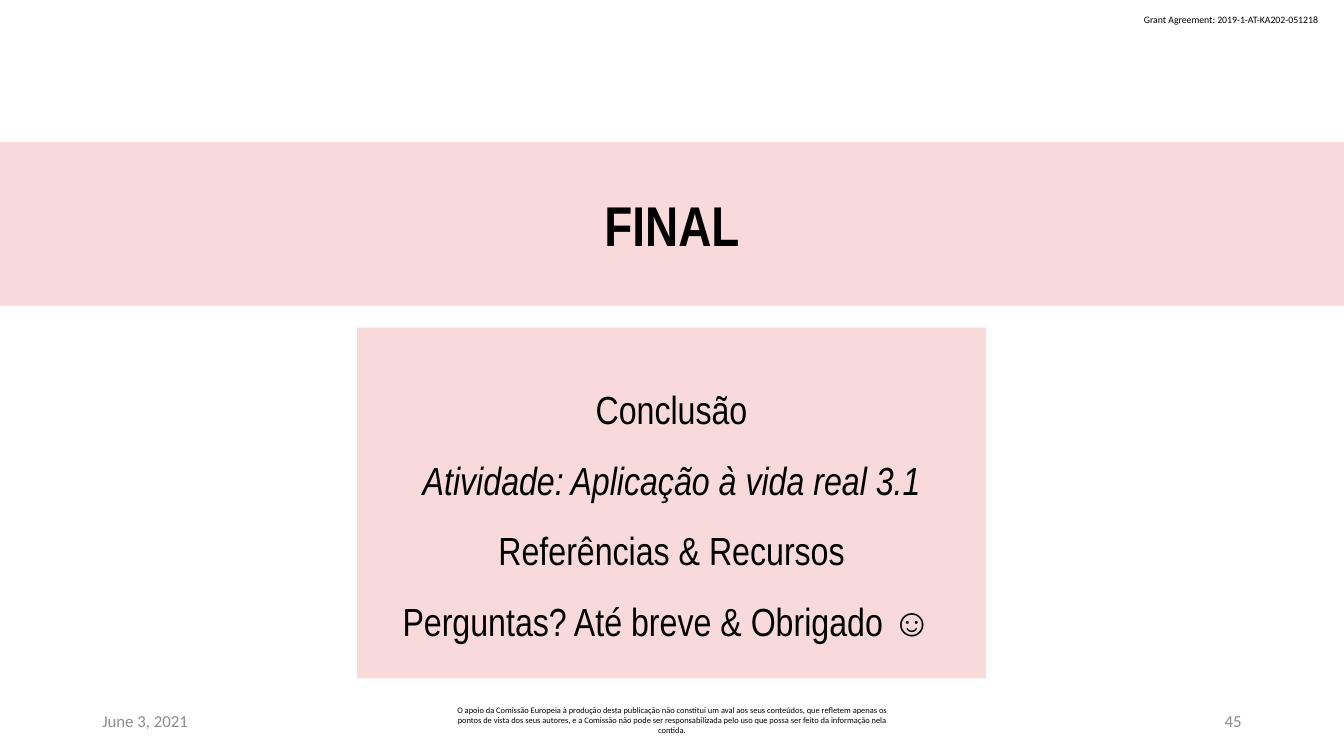
"""Build the closing slide with its title band, closing list and footer."""
from dataclasses import dataclass

from lxml import etree
from pptx import Presentation
from pptx.dml.color import RGBColor
from pptx.enum.text import MSO_ANCHOR, MSO_AUTO_SIZE, PP_ALIGN
from pptx.oxml.ns import qn
from pptx.util import Pt

LEFT, CENTER, RIGHT = PP_ALIGN.LEFT, PP_ALIGN.CENTER, PP_ALIGN.RIGHT
TOP, MIDDLE = MSO_ANCHOR.TOP, MSO_ANCHOR.MIDDLE
NO_FIT = MSO_AUTO_SIZE.NONE
PX = 9525
PINK, BLACK, GREY = "F9DADA", "000000", "8C8C8C"
NARROW, SANS = "Arial Narrow", "Calibri"


@dataclass
class Box:
    left: int
    top: int
    width: int
    height: int


@dataclass
class Note:
    box: Box
    text: str
    size: int
    color: str = BLACK
    align: PP_ALIGN = LEFT
    anchor: MSO_ANCHOR = MIDDLE
    wrap: bool = True


BAND = Box(0, 135, 1280, 156)
PANEL = Box(340, 312, 599, 334)
ITEMS = [
    "Conclusão",
    "Atividade: Aplicação à vida real 3.1",
    "Referências & Recursos",
    "Perguntas? Até breve & Obrigado ☺ ",
]
NOTES = [
    Note(Box(1080, 8, 189, 21), "Grant Agreement: 2019-1-AT-KA202-051218", 7,
         anchor=TOP, wrap=False),
    Note(Box(88, 667, 288, 38), "June 3, 2021", 12, GREY),
    Note(Box(424, 667, 432, 38),
         "O apoio da Comissão Europeia à produção desta publicação não constitui "
         "um aval aos seus conteúdos, que refletem apenas os pontos de vista dos "
         "seus autores, e a Comissão não pode ser responsabilizada pelo uso que "
         "possa ser feito da informação nela contida.", 6, align=CENTER),
    Note(Box(904, 667, 288, 38), "45", 12, GREY, RIGHT),
]


def paint(code: str) -> RGBColor:
    return RGBColor.from_string(code)


def scale(box: Box) -> list[int]:
    return [n * PX for n in (box.left, box.top, box.width, box.height)]


def write(para, text: str, *, size: int, font: str = SANS, color: str = BLACK,
          align: PP_ALIGN = LEFT, bold: bool = False, italic: bool = False,
          pitch: float = 1.0) -> None:
    para.alignment = align
    para.line_spacing = pitch
    para.space_before = Pt(0)
    run = para.add_run()
    run.text = text
    face = run.font
    face.name, face.size = font, Pt(size)
    face.bold, face.italic = bold, italic
    face.color.rgb = paint(color)


def place(shape, box: Box):
    shape.left, shape.top, shape.width, shape.height = scale(box)
    shape.fill.solid()
    shape.fill.fore_color.rgb = paint(PINK)
    frame = shape.text_frame
    frame.word_wrap, frame.auto_size = True, NO_FIT
    frame.vertical_anchor = MIDDLE
    frame.margin_left = frame.margin_right = 12 * PX
    frame.margin_top = frame.margin_bottom = 7 * PX
    return frame


def fill_list(frame, items: list[str]) -> None:
    for i, text in enumerate(items):
        para = frame.add_paragraph() if i else frame.paragraphs[0]
        props = para._p.get_or_add_pPr()
        props.set("marL", "0")
        props.set("indent", "0")
        etree.SubElement(props, qn("a:buNone"))
        write(para, text, size=28, font=NARROW, align=CENTER,
              italic=text.startswith("Atividade"), pitch=1.5)


def add_note(slide, note: Note) -> None:
    frame = slide.shapes.add_textbox(*scale(note.box)).text_frame
    frame.word_wrap = note.wrap
    frame.vertical_anchor = note.anchor
    write(frame.paragraphs[0], note.text, size=note.size, color=note.color,
          align=note.align)


def main() -> None:
    deck = Presentation()
    deck.slide_width, deck.slide_height = 1280 * PX, 720 * PX
    slide = deck.slides.add_slide(deck.slide_layouts[1])
    title = place(slide.shapes.title, BAND)
    write(title.paragraphs[0], "FINAL", size=40, font=NARROW, align=CENTER,
          bold=True)
    fill_list(place(slide.placeholders[1], PANEL), ITEMS)
    for note in NOTES:
        add_note(slide, note)
    deck.save("out.pptx")


if __name__ == "__main__":
    main()
